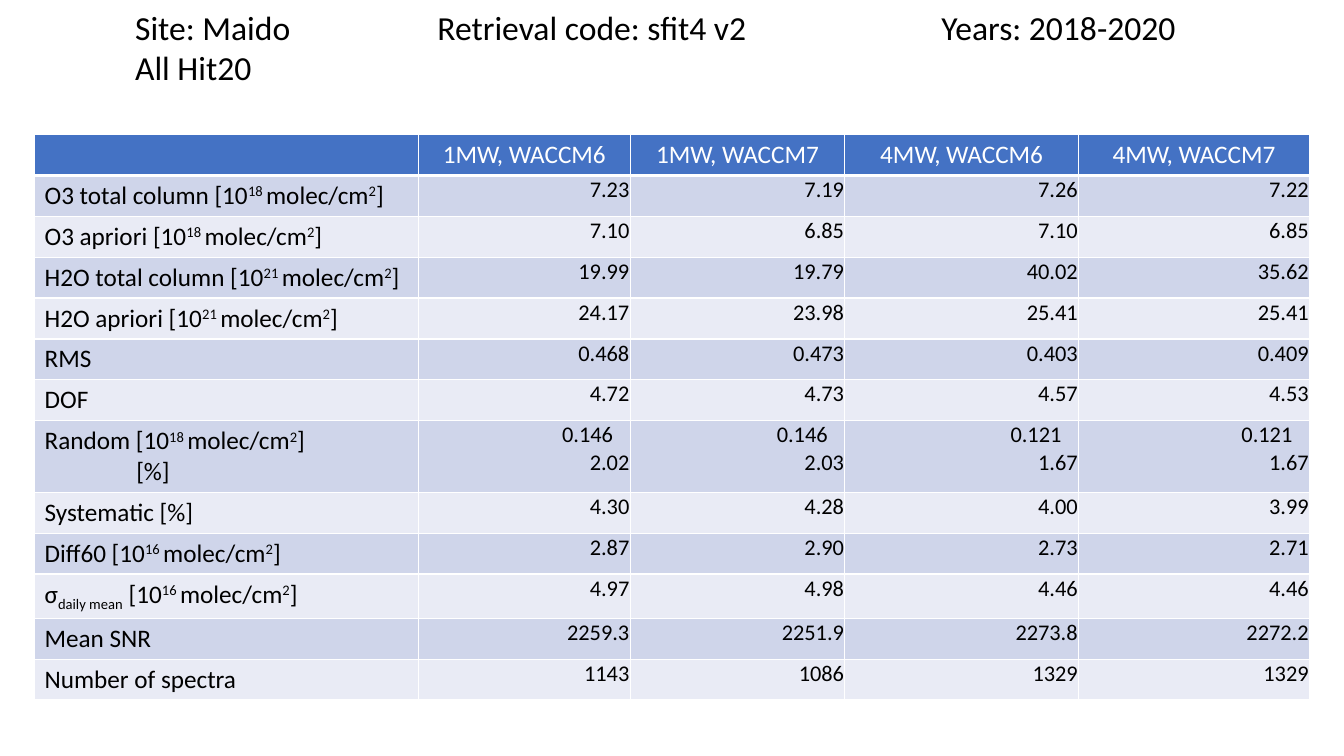
from lxml import etree
from pptx import Presentation
from pptx.dml.color import RGBColor
from pptx.enum.text import MSO_ANCHOR, MSO_AUTO_SIZE, PP_ALIGN
from pptx.oxml.ns import qn
from pptx.util import Cm, Pt

LEFT, CENTER, RIGHT = PP_ALIGN.LEFT, PP_ALIGN.CENTER, PP_ALIGN.RIGHT
TOP = MSO_ANCHOR.TOP
NO_AUTOFIT = MSO_AUTO_SIZE.NONE

COLORS = {
    "text": "000000",
    "header": "4472C4",
    "white": "FFFFFF",
    "band_dark": "CFD5EA",
    "band_light": "E9EBF5",
}
FONT = "Calibri"
SUPER, SUB = 30, -25

COLUMN_WIDTHS = [9.68, 5.33, 5.41, 5.89, 5.82]
HEADER_HEIGHT, ROW_HEIGHT, TALL_HEIGHT = 0.94, 1.03, 1.79
PERCENT_INDENT = 2.31
ERROR_INSET = 0.45


def column_unit(power):
    """Spans for a molecular column unit such as [10^18 molec/cm^2]."""
    return [(" [10", 0), (f"{power} ", SUPER), ("molec/cm", 0), ("2", SUPER), ("]", 0)]


HEADERS = ["1MW, WACCM6", "1MW, WACCM7", "4MW, WACCM6", "4MW, WACCM7"]

# Each row: label spans, then one value per retrieval setup
ROWS = [
    ([("O3 total column", 0), *column_unit(18)], ["7.23", "7.19", "7.26", "7.22"]),
    ([("O3 apriori", 0), *column_unit(18)], ["7.10", "6.85", "7.10", "6.85"]),
    ([("H2O total column", 0), *column_unit(21)], ["19.99", "19.79", "40.02", "35.62"]),
    ([("H2O apriori", 0), *column_unit(21)], ["24.17", "23.98", "25.41", "25.41"]),
    ([("RMS", 0)], ["0.468", "0.473", "0.403", "0.409"]),
    ([("DOF", 0)], ["4.72", "4.73", "4.57", "4.53"]),
    ([("Random", 0), *column_unit(18)], [("0.146", "2.02"), ("0.146", "2.03"),
                                         ("0.121", "1.67"), ("0.121", "1.67")]),
    ([("Systematic [%]", 0)], ["4.30", "4.28", "4.00", "3.99"]),
    ([("Diff60", 0), *column_unit(16)], ["2.87", "2.90", "2.73", "2.71"]),
    ([("σ", 0), ("daily mean", SUB), *column_unit(16)], ["4.97", "4.98", "4.46", "4.46"]),
    ([("Mean SNR", 0)], ["2259.3", "2251.9", "2273.8", "2272.2"]),
    ([("Number of spectra", 0)], ["1143", "1086", "1329", "1329"]),
]


def add_span(para, text, size, color="text", baseline=0):
    span = para.add_run()
    span.text = text
    span.font.name = FONT
    span.font.size = Pt(size)
    span.font.bold = False
    span.font.color.rgb = RGBColor.from_string(COLORS[color])
    if baseline:
        span._r.get_or_add_rPr().set("baseline", str(baseline * 1000))


def set_tabs(para, stops, align="l"):
    tabs = etree.SubElement(para._p.get_or_add_pPr(), qn("a:tabLst"))
    for stop in stops:
        etree.SubElement(tabs, qn("a:tab"), pos=str(Cm(stop)), algn=align)


def style_cell(cell, fill, bottom=1):
    properties = cell._tc.get_or_add_tcPr()
    for side, width in (("L", 1), ("R", 1), ("T", 1), ("B", bottom)):
        line = etree.SubElement(properties, qn(f"a:ln{side}"), w=str(Pt(width)))
        solid = etree.SubElement(line, qn("a:solidFill"))
        etree.SubElement(solid, qn("a:srgbClr"), val=COLORS["white"])
    cell.fill.solid()
    cell.fill.fore_color.rgb = RGBColor.from_string(COLORS[fill])


def fill_label(cell, spans, has_percent):
    frame = cell.text_frame
    for text, baseline in spans:
        add_span(frame.paragraphs[0], text, 18, baseline=baseline)
    if has_percent:
        para = frame.add_paragraph()
        para._p.get_or_add_pPr().set("marL", str(Cm(PERCENT_INDENT)))
        add_span(para, "[%]", 18)


def fill_value(cell, value, width):
    cell.margin_left = cell.margin_right = cell.margin_top = Cm(0.02)
    cell.margin_bottom = Cm(0)
    para = cell.text_frame.paragraphs[0]
    if isinstance(value, tuple):
        # The absolute error stands slightly inside the percentage below it
        absolute, value = value
        set_tabs(para, [width - ERROR_INSET], "r")
        add_span(para, f"\t{absolute}", 16)
        para = cell.text_frame.add_paragraph()
    para.alignment = RIGHT
    add_span(para, value, 16)


def add_heading(page):
    box = page.shapes.title
    box.left, box.top, box.width, box.height = Cm(3.15), Cm(0.05), Cm(26.8), Cm(3.33)
    frame = box.text_frame
    frame.word_wrap = True
    frame.auto_size = NO_AUTOFIT
    frame.vertical_anchor = TOP
    first, second = frame.paragraphs[0], frame.add_paragraph()
    first.alignment = second.alignment = LEFT
    set_tabs(first, [7.62, 20.32])
    add_span(first, "Site: Maido\tRetrieval code: sfit4 v2\tYears: 2018-2020", 24)
    add_span(second, "All Hit20", 24)


def add_results(page):
    heights = [HEADER_HEIGHT] + [
        TALL_HEIGHT if isinstance(values[0], tuple) else ROW_HEIGHT for _, values in ROWS
    ]
    table = page.shapes.add_table(
        len(heights), len(COLUMN_WIDTHS), Cm(0.87), Cm(3.39),
        Cm(sum(COLUMN_WIDTHS)), Cm(sum(heights)),
    ).table
    for column, width in zip(table.columns, COLUMN_WIDTHS):
        column.width = Cm(width)
    for row, height in zip(table.rows, heights):
        row.height = Cm(height)

    # Header row
    for index in range(len(COLUMN_WIDTHS)):
        style_cell(table.cell(0, index), "header", bottom=3)
    for index, header in enumerate(HEADERS, start=1):
        para = table.cell(0, index).text_frame.paragraphs[0]
        para.alignment = CENTER
        add_span(para, header, 18, "white")

    # Banded body rows
    for number, (label, values) in enumerate(ROWS, start=1):
        band = "band_dark" if number % 2 else "band_light"
        for index in range(len(COLUMN_WIDTHS)):
            style_cell(table.cell(number, index), band)
        fill_label(table.cell(number, 0), label, isinstance(values[0], tuple))
        for index, value in enumerate(values, start=1):
            fill_value(table.cell(number, index), value, COLUMN_WIDTHS[index])


def main():
    deck = Presentation()
    deck.slide_width, deck.slide_height = Cm(33.87), Cm(19.05)
    page = deck.slides.add_slide(deck.slide_layouts[5])
    add_heading(page)
    add_results(page)
    deck.save("out.pptx")


if __name__ == "__main__":
    main()
